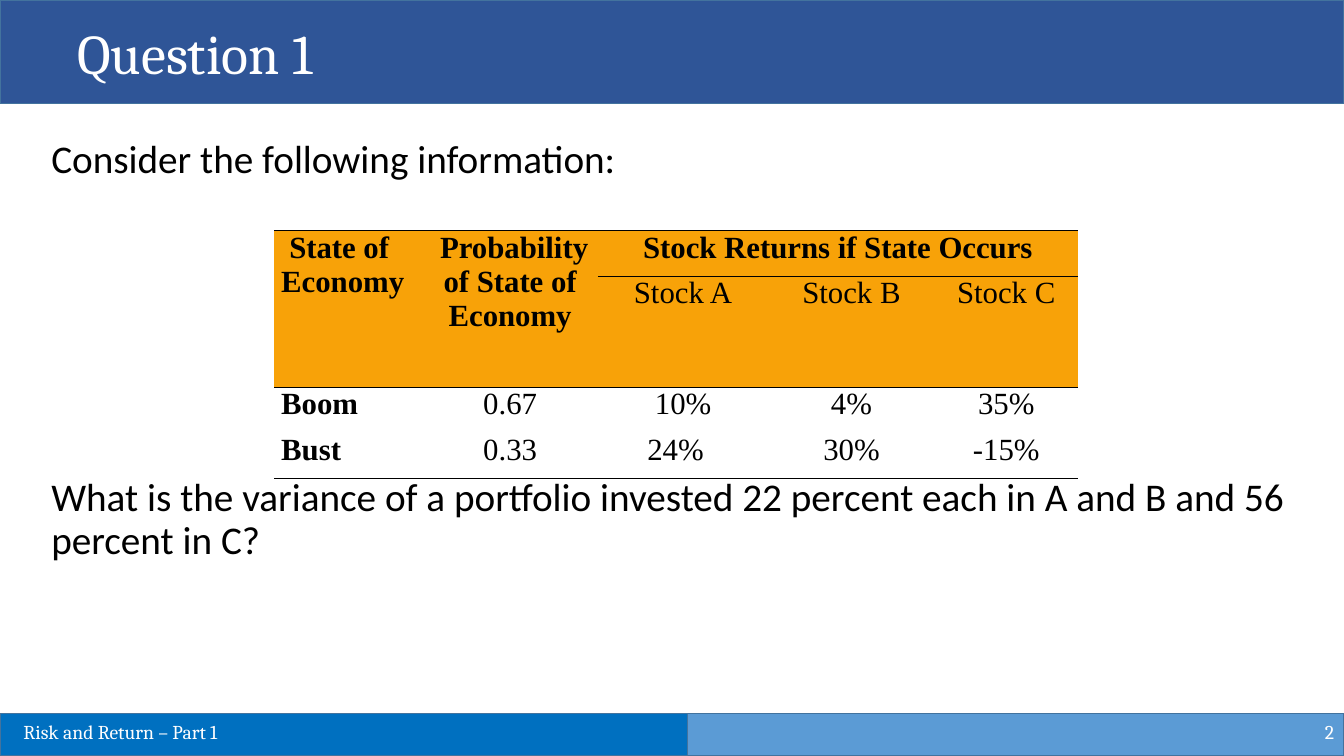
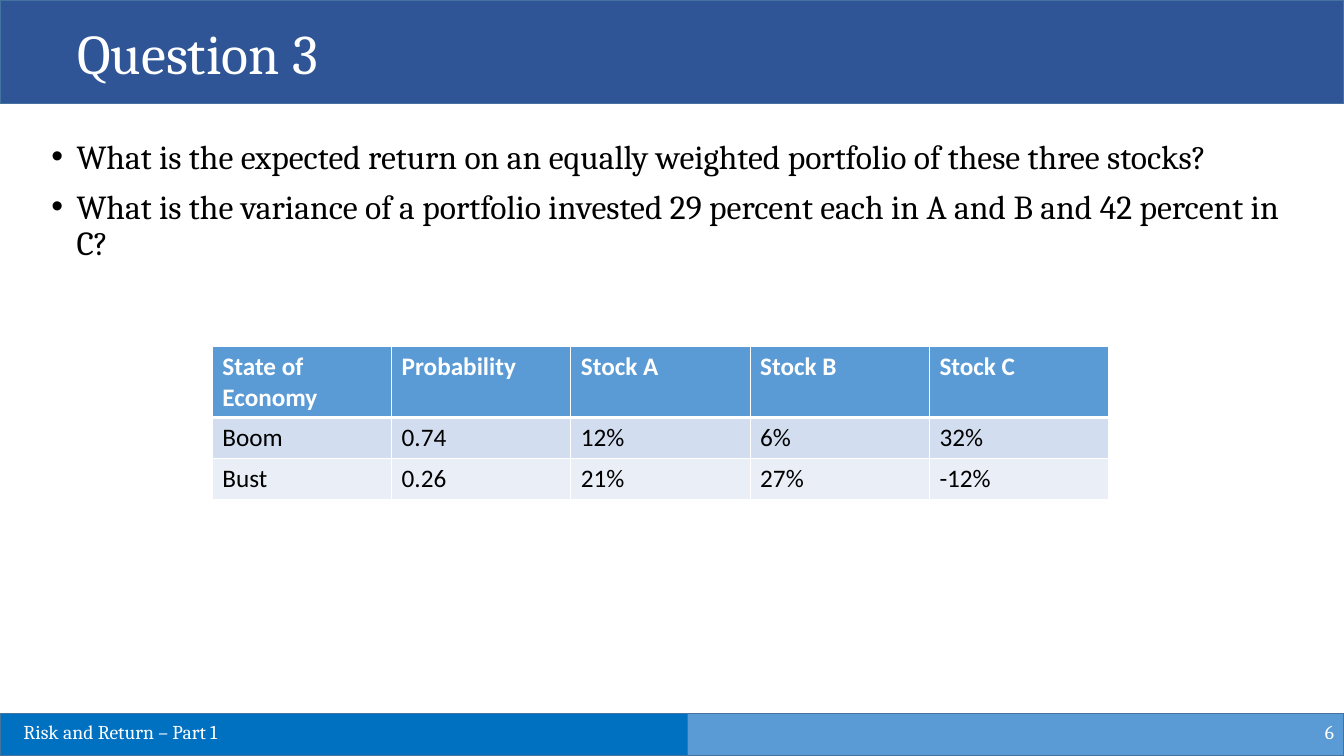
import pptx
import pptx.util
import pptx.dml.color
import pptx.enum.shapes
import pptx.enum.text
import pptx.oxml
import pptx.oxml.ns

INK = {
    "navy": "2F5597", "edge": "43739E", "blue": "0070C0", "sky": "5B9BD5",
    "gold": "F8A208", "pale": "D2DEEF", "mist": "EAEFF7",
    "white": "FFFFFF", "black": "000000",
}
WIDE, TALL = 13.33, 7.5
PAGE = (0, 0, WIDE, TALL)
SERIF, SANS, TIMES = "Cambria", "Calibri", "Times New Roman"
ALIGN = pptx.enum.text.PP_ALIGN
ANCHOR = pptx.enum.text.MSO_ANCHOR
Inches, Pt = pptx.util.Inches, pptx.util.Pt


def part(box, x, y, wide, tall):
    return (box[0] + x * box[2], box[1] + y * box[3], wide * box[2], tall * box[3])


HEAD = part(PAGE, 0, 0, 1, 0.1373)
BODY = part(PAGE, 0.0308, 0.1787, 0.9445, 0.76)
FOOT = part(PAGE, 0, 0.944, 1, 0.056)


def color(name):
    return pptx.dml.color.RGBColor.from_string(INK[name])


def emus(box):
    return [Inches(v) for v in box]


def write(para, text, size, face, ink, bold=False, align=ALIGN.LEFT):
    para.alignment = align
    run = para.add_run()
    run.text = text
    run.font.size = Pt(size)
    run.font.name = face
    run.font.bold = bold
    run.font.color.rgb = color(ink)


def label(slide, box, text, size, face, ink, align=ALIGN.LEFT, anchor=ANCHOR.TOP):
    frame = slide.shapes.add_textbox(*emus(box)).text_frame
    frame.word_wrap = True
    frame.vertical_anchor = anchor
    para = frame.paragraphs[0]
    write(para, text, size, face, ink, align=align)
    return frame


def bar(slide, box, fill):
    kind = pptx.enum.shapes.MSO_SHAPE.RECTANGLE
    shape = slide.shapes.add_shape(kind, *emus(box))
    shape.shadow.inherit = False
    shape.fill.solid()
    shape.fill.fore_color.rgb = color(fill)
    shape.line.color.rgb = color("edge")
    shape.line.width = Pt(1)
    return shape


def header(slide, box, text):
    title = slide.shapes.title
    band = bar(slide, box, "navy")
    title._element.addprevious(band._element)
    spot = emus(part(box, 0.05, 0.13, 0.91, 0.75))
    title.left, title.top, title.width, title.height = spot
    frame = title.text_frame
    frame.auto_size = pptx.enum.text.MSO_AUTO_SIZE.NONE
    frame.vertical_anchor = ANCHOR.TOP
    write(frame.paragraphs[0], text, 40, SERIF, "white")


def footer(slide, box, number):
    split = 0.5116
    bar(slide, part(box, 0, 0, split, 1), "blue")
    bar(slide, part(box, split, 0, 1 - split, 1), "sky")
    label(slide, part(box, 0.775, -0.05, 0.225, 0.95), number, 14, SERIF, "white",
          ALIGN.RIGHT, ANCHOR.MIDDLE)
    label(slide, part(box, 0.01, 0.02, 0.42, 0.81), "Risk and Return – Part 1",
          14, SERIF, "white")


def begin(deck, title, number):
    slide = deck.slides.add_slide(deck.slide_layouts[5])
    header(slide, HEAD, title)
    footer(slide, FOOT, number)
    return slide


def border(cell, widths, ink):
    props = cell._tc.get_or_add_tcPr()
    for spot, (side, width) in enumerate(zip("LRTB", widths)):
        paint = f'<a:solidFill><a:srgbClr val="{INK[ink]}"/></a:solidFill>'
        line = pptx.oxml.parse_xml(
            f'<a:ln{side} {pptx.oxml.ns.nsdecls("a")} w="{Pt(width)}">'
            f'{paint if width else "<a:noFill/>"}</a:ln{side}>')
        props.insert(spot, line)


def grid(slide, box, cols, rows, spans=()):
    shape = slide.shapes.add_table(len(rows), len(cols), *emus(box))
    table = shape.table
    table.first_row = table.horz_banding = False
    for col, share in zip(table.columns, cols):
        col.width = Inches(box[2] * share / sum(cols))
    for row, share in zip(table.rows, rows):
        row.height = Inches(box[3] * share / sum(rows))
    for first, last in spans:
        table.cell(*first).merge(table.cell(*last))
    return table


def tint(cell, fill):
    if fill:
        cell.fill.solid()
        cell.fill.fore_color.rgb = color(fill)
    else:
        cell.fill.background()


def ruled(slide, box):
    data = [
        ["State of Economy", "Probability of State of Economy",
         "Stock Returns if State Occurs", "", ""],
        ["", "", "Stock A", "Stock B", "Stock C"],
        ["Boom", "0.67", "10%", "4%", "35%"],
        ["Bust", "0.33", "24%", "30%", "-15%"],
    ]
    spans = [((0, 0), (1, 0)), ((0, 1), (1, 1)), ((0, 2), (0, 4))]
    table = grid(slide, box, [1.47, 1.74, 1.69, 1.65, 1.42],
                 [0.45, 1.1, 0.45, 0.45], spans)

    def rule(edge, col):
        return 1 if edge in (0, 2, 4) or (edge == 1 and col > 1) else 0

    for r, line in enumerate(data):
        for c, text in enumerate(line):
            cell = table.cell(r, c)
            tint(cell, "gold" if r < 2 else None)
            border(cell, (0, 0, rule(r, c), rule(r + cell.span_height, c)), "black")
            cell.margin_left = cell.margin_right = Inches(0.07)
            cell.margin_top = cell.margin_bottom = 0
            if text:
                para = cell.text_frame.paragraphs[0]
                write(para, text, 22, TIMES, "black", r == 0 or c == 0,
                      ALIGN.CENTER if c else ALIGN.LEFT)
                if r == 0 and c < 2:
                    para._p.get_or_add_pPr().set("indent", str(Inches(0.08)))
    table.cell(3, 2).margin_right = Inches(0.22)


def banded(slide, box):
    data = [
        ["State of Economy", "Probability", "Stock A", "Stock B", "Stock C"],
        ["Boom", "0.74", "12%", "6%", "32%"],
        ["Bust", "0.26", "21%", "27%", "-12%"],
    ]
    table = grid(slide, box, [1] * 5, [0.69, 0.41, 0.41])
    for r, line in enumerate(data):
        for c, text in enumerate(line):
            cell = table.cell(r, c)
            tint(cell, ("sky", "pale", "mist")[r])
            border(cell, (1, 1, 3 if r == 1 else 1, 1 if r else 3), "white")
            write(cell.text_frame.paragraphs[0], text, 18, SANS,
                  "black" if r else "white", r == 0)


def prompt(slide, box, text):
    frame = label(slide, box, text, 28, SANS, "black")
    frame.paragraphs[0].line_spacing = 0.9


def points(slide, box, lines):
    frame = label(slide, box, lines[0], 24, SERIF, "black")
    for text in lines[1:]:
        write(frame.add_paragraph(), text, 24, SERIF, "black")
    for para in frame.paragraphs:
        para.line_spacing = 0.9
        para.space_before = Pt(10)
        props = para._p.get_or_add_pPr()
        props.set("marL", str(Inches(0.25)))
        props.set("indent", str(-Inches(0.25)))
        for tag in ('buFont {} typeface="Arial"', 'buChar {} char="•"'):
            mark = tag.format(pptx.oxml.ns.nsdecls("a"))
            props.append(pptx.oxml.parse_xml(f"<a:{mark}/>"))


def first(deck):
    slide = begin(deck, "Question 1", "2")
    prompt(slide, part(BODY, 0, 0, 1, 0.1), "Consider the following information:")
    prompt(slide, part(BODY, 0, 0.588, 1, 0.18),
           "What is the variance of a portfolio invested 22 percent each in A and B "
           "and 56 percent in C?")
    ruled(slide, part(PAGE, 0.204, 0.3053, 0.598, 0.3275))


def third(deck):
    slide = begin(deck, "Question 3", "6")
    points(slide, BODY, [
        "What is the expected return on an equally weighted portfolio of these "
        "three stocks?",
        "What is the variance of a portfolio invested 29 percent each in A and B "
        "and 42 percent in C?",
    ])
    banded(slide, part(PAGE, 0.158, 0.4587, 0.667, 0.2013))


def main():
    deck = pptx.Presentation()
    deck.slide_width, deck.slide_height = Inches(WIDE), Inches(TALL)
    first(deck)
    third(deck)
    deck.save("out.pptx")


if __name__ == "__main__":
    main()
